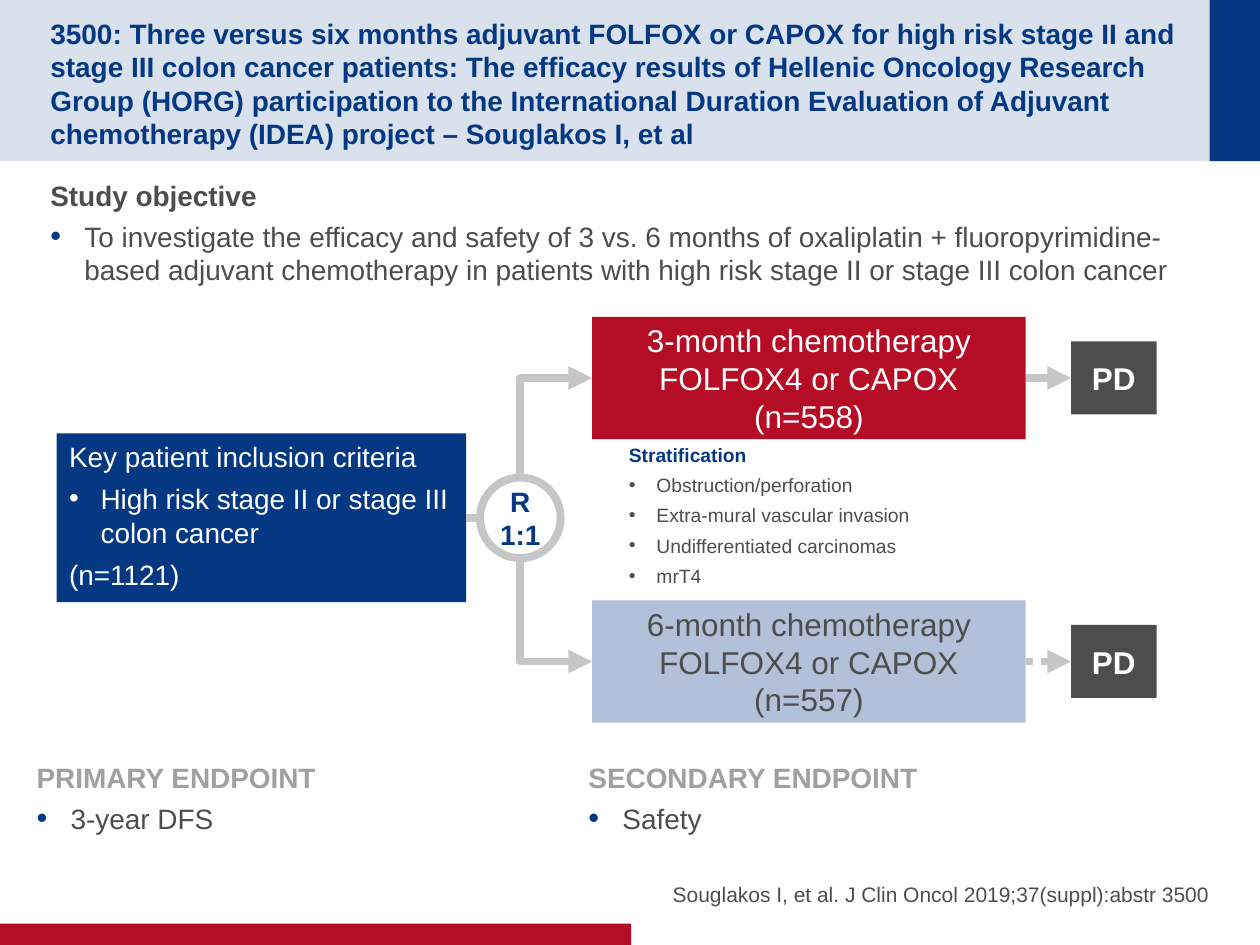
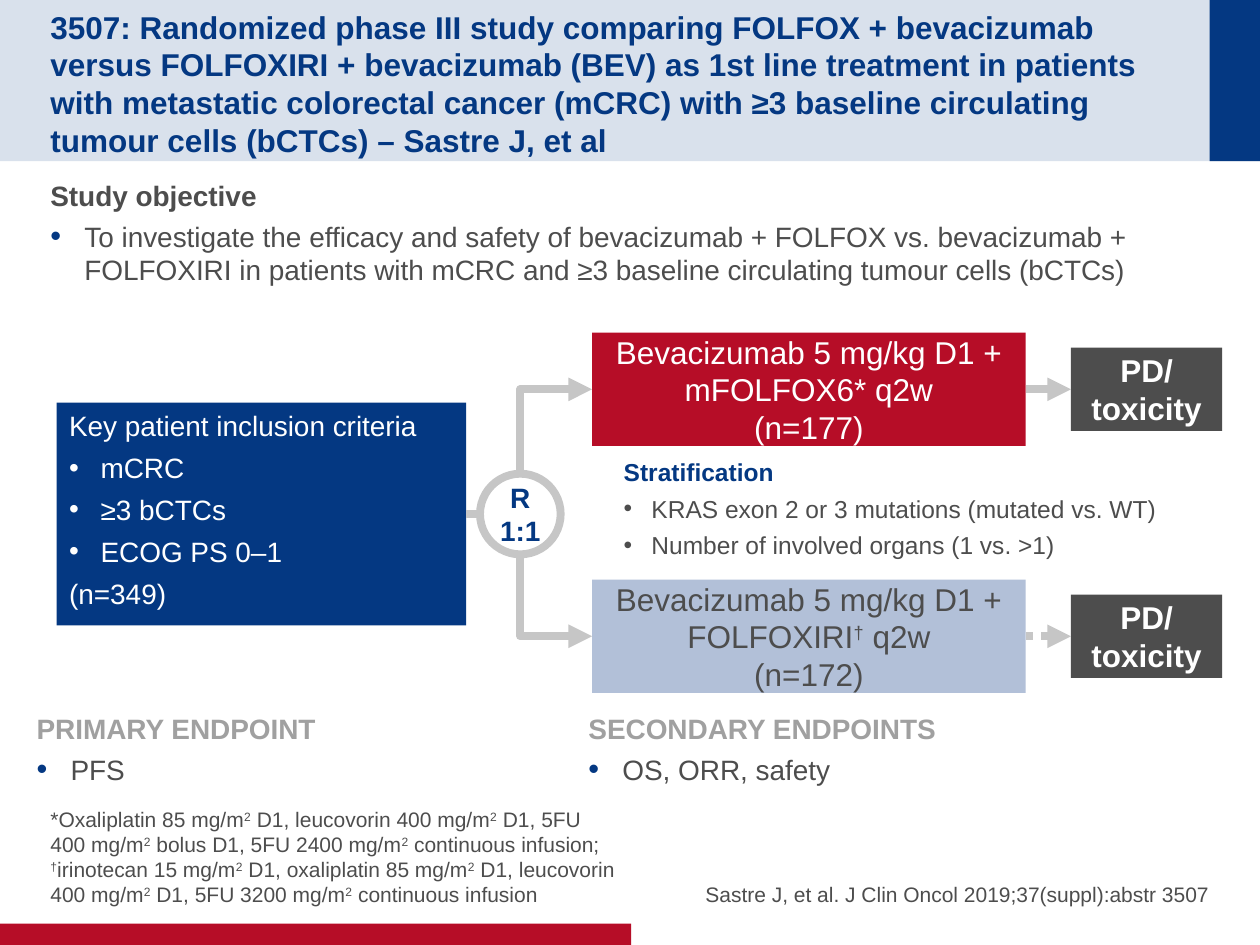
from pptx import Presentation
from pptx.dml.color import RGBColor
from pptx.enum.dml import MSO_LINE
from pptx.enum.shapes import MSO_CONNECTOR as Connector, MSO_SHAPE as Shape
from pptx.enum.text import MSO_ANCHOR as Anchor, PP_ALIGN as Align
from pptx.oxml.ns import qn
from pptx.util import Inches, Pt
from lxml.etree import SubElement

# Content: "^" switches superscript on and off, "•" opens a bulleted paragraph
STUDIES = [
    {
        "title": "3500: Three versus six months adjuvant FOLFOX or CAPOX for high risk stage II and "
                 "stage III colon cancer patients: The efficacy results of Hellenic Oncology Research "
                 "Group (HORG) participation to the International Duration Evaluation of Adjuvant "
                 "chemotherapy (IDEA) project – Souglakos I, et al",
        "title_size": 16,
        "objective": "•To investigate the efficacy and safety of 3 vs. 6 months of oxaliplatin + "
                     "fluoropyrimidine-based adjuvant chemotherapy in patients with high risk stage II "
                     "or stage III colon cancer",
        "criteria": ["Key patient inclusion criteria",
                     "•High risk stage II or stage III colon cancer", "(n=1121)"],
        "arms": ["3-month chemotherapy FOLFOX4 or CAPOX\n(n=558)",
                 "6-month chemotherapy FOLFOX4 or CAPOX\n(n=557)"],
        "outcome": "PD",
        "strata": ["Stratification", "•Obstruction/perforation", "•Extra-mural vascular invasion",
                   "•Undifferentiated carcinomas", "•mrT4"],
        "endpoints": [["PRIMARY ENDPOINT", "•3-year DFS"], ["SECONDARY ENDPOINT", "•Safety"]],
        "footnote": None,
        "citation": "Souglakos I, et al. J Clin Oncol 2019;37(suppl):abstr 3500",
        "hub_y": 4.11, "criteria_height": 1.34, "arm_centers": (3.0, 5.25), "arm_height": 0.97,
        "outcome_size": (0.68, 0.58), "strata_at": (4.99, 3.47), "strata_size": 11,
        "endpoints_top": 5.99,
    },
    {
        "title": "3507: Randomized phase III study comparing FOLFOX + bevacizumab versus FOLFOXIRI + "
                 "bevacizumab (BEV) as 1st line treatment in patients with metastatic colorectal cancer "
                 "(mCRC) with ≥3 baseline circulating tumour cells (bCTCs) – Sastre J, et al",
        "title_size": 18,
        "objective": "•To investigate the efficacy and safety of bevacizumab + FOLFOX vs. bevacizumab + "
                     "FOLFOXIRI in patients with mCRC and ≥3 baseline circulating tumour cells (bCTCs)",
        "criteria": ["Key patient inclusion criteria", "•mCRC", "•≥3 bCTCs", "•ECOG PS 0–1", "(n=349)"],
        "arms": ["Bevacizumab 5 mg/kg D1 + mFOLFOX6* q2w\n(n=177)",
                 "Bevacizumab 5 mg/kg D1 + FOLFOXIRI^†^ q2w\n(n=172)"],
        "outcome": "PD/\ntoxicity",
        "strata": ["Stratification", "•KRAS exon 2 or 3 mutations (mutated vs. WT)",
                   "•Number of involved organs (1 vs. >1)"],
        "endpoints": [["PRIMARY ENDPOINT", "•PFS"], ["SECONDARY ENDPOINTS", "•OS, ORR, safety"]],
        "footnote": "*Oxaliplatin 85 mg/m^2^ D1, leucovorin 400 mg/m^2^ D1, 5FU 400 mg/m^2^ bolus D1, "
                    "5FU 2400 mg/m^2^ continuous infusion; ^†^irinotecan 15 mg/m^2^ D1, oxaliplatin "
                    "85 mg/m^2^ D1, leucovorin 400 mg/m^2^ D1, 5FU 3200 mg/m^2^ continuous infusion",
        "citation": "Sastre J, et al. J Clin Oncol 2019;37(suppl):abstr 3507",
        "hub_y": 4.08, "criteria_height": 1.77, "arm_centers": (3.09, 5.05), "arm_height": 0.9,
        "outcome_size": (1.2, 0.66), "strata_at": (4.95, 3.58), "strata_size": 14,
        "endpoints_top": 5.6,
    },
]

# Shared style
COLORS = {"navy": "043882", "band": "D9E1EC", "red": "B60D27", "pale": "B2C0D8",
          "text": "4D4D4D", "heading": "A0A0A0", "line": "C6C6C6", "white": "FFFFFF"}
ARM_STYLES = [("red", "white", None), ("pale", "text", MSO_LINE.ROUND_DOT)]
FONT = "Arial"
LINE_WIDTH = 4.5
MARGIN = 0.4
CRITERIA_LEFT, CRITERIA_WIDTH = 0.45, 3.25
HUB_X, HUB_SIZE = 4.13, 0.64
ARM_LEFT, ARM_WIDTH = 4.7, 3.44
OUTCOME_LEFT = 8.5
ENDPOINT_LEFTS = (0.29, 4.67)
TOP, LEFT, RIGHT = 0, 1, 3  # connection sites of a rectangle
ELLIPSE_BOTTOM = 4


def rgb(name):
    return RGBColor.from_string(COLORS[name])


# Text
def add_bullet(paragraph, indent, color):
    properties = paragraph._p.get_or_add_pPr()
    properties.set("marL", str(Inches(indent)))
    properties.set("indent", str(-Inches(indent)))
    if color:
        bullet_color = SubElement(properties, qn("a:buClr"))
        SubElement(bullet_color, qn("a:srgbClr")).set("val", COLORS[color])
        SubElement(properties, qn("a:buSzPct")).set("val", "110000")
    SubElement(properties, qn("a:buFont")).set("typeface", FONT)
    SubElement(properties, qn("a:buChar")).set("char", "•")


def add_runs(paragraph, text, size, color, bold):
    for index, piece in enumerate(text.split("^")):
        for line_number, line in enumerate(piece.split("\n")):
            if line_number:
                paragraph.add_line_break()
            run = paragraph.add_run()
            run.text = line
            run.font.name, run.font.size, run.font.bold = FONT, Pt(size), bold
            run.font.color.rgb = rgb(color)
            if index % 2:
                run._r.get_or_add_rPr().set("baseline", "30000")


def write(shape, lines, size, color="text", bold=False, head=None, align=Align.LEFT,
          anchor=Anchor.TOP, insets=(0, 0.05), after=4, indent=0.27, bullet_color=None, wrap=True):
    """Fill a shape with paragraphs; head is the colour of a bold first line."""
    frame = shape.text_frame
    frame.word_wrap, frame.vertical_anchor = wrap, anchor
    frame.margin_left = frame.margin_right = Inches(insets[0])
    frame.margin_top = frame.margin_bottom = Inches(insets[1])
    for number, line in enumerate(lines):
        paragraph = frame.add_paragraph() if number else frame.paragraphs[0]
        if line.startswith("•"):
            add_bullet(paragraph, indent, bullet_color)
        paragraph.alignment, paragraph.space_after = align, Pt(after)
        is_head = head is not None and number == 0
        add_runs(paragraph, line.lstrip("•"), size, head if is_head else color, bold or is_head)


def add_text(slide, left, top, width, height, lines, size, **style):
    box = slide.shapes.add_textbox(Inches(left), Inches(top), Inches(width), Inches(height))
    write(box, lines, size, **style)


# Shapes and lines
def add_block(slide, left, top, width, height, fill, kind=Shape.RECTANGLE):
    shape = slide.shapes.add_shape(kind, Inches(left), Inches(top), Inches(width), Inches(height))
    shape.shadow.inherit = False
    if fill:
        shape.fill.solid()
        shape.fill.fore_color.rgb = rgb(fill)
    else:
        shape.fill.background()
    shape.line.fill.background()
    return shape


def add_box(slide, left, center_y, width, height, fill, text, color, bold=False):
    box = add_block(slide, left, center_y - height / 2, width, height, fill)
    write(box, [text], 18, color=color, bold=bold, align=Align.CENTER, anchor=Anchor.MIDDLE,
          insets=(0.1, 0), after=0)
    return box


def add_line(slide, kind=Connector.STRAIGHT, start=(0, 0), end=(0, 0), arrow=None, dash=None):
    points = [Inches(value) for value in (*start, *end)]
    connector = slide.shapes.add_connector(kind, *points)
    connector.line.color.rgb = rgb("line")
    connector.line.width = Pt(LINE_WIDTH)
    if dash:
        connector.line.dash_style = dash
    if arrow:
        SubElement(connector.line._get_or_add_ln(), qn(arrow)).set("type", "triangle")
    SubElement(connector._element.spPr, qn("a:effectLst"))
    return connector


def add_branch(slide, arm, hub, is_upper):
    """Elbow between the hub and an arm, with its arrowhead at the arm."""
    branch = add_line(slide, Connector.ELBOW, arrow="a:headEnd")
    branch._element.spPr.find(qn("a:prstGeom")).set("prst", "bentConnector2")
    branch.begin_connect(arm, LEFT)
    branch.end_connect(hub, TOP)
    if not is_upper:
        branch._element.xpath(".//a:endCxn")[0].set("idx", str(ELLIPSE_BOTTOM))
        branch.end_y = hub.top + hub.height


# Slide parts
def add_frame(slide, study):
    add_block(slide, 0, 0, 10, 1.28, "band")
    add_block(slide, 9.6, 0, 0.4, 1.28, "navy")
    add_block(slide, 0, 7.33, 5.01, 0.17, "red")
    add_text(slide, MARGIN, 0.22, 9.01, 0.88, [study["title"]], study["title_size"],
             color="navy", bold=True, anchor=Anchor.MIDDLE, insets=(0, 0), after=0)
    add_text(slide, MARGIN, 1.37, 9.2, 1, ["Study objective", study["objective"]], 16,
             head="text", bullet_color="navy")
    footer = {"anchor": Anchor.BOTTOM, "insets": (0, 0)}
    if study["footnote"]:
        add_text(slide, MARGIN, 6.67, 4.52, 0.53, [study["footnote"]], 12, **footer)
    add_text(slide, 4.92, 6.67, 4.68, 0.53, [study["citation"]], 12, align=Align.RIGHT, **footer)


def add_flow(slide, study):
    hub_y, height = study["hub_y"], study["criteria_height"]
    criteria = add_block(slide, CRITERIA_LEFT, hub_y - height / 2, CRITERIA_WIDTH, height, "navy")
    write(criteria, study["criteria"], 16, color="white", insets=(0.1, 0.05), after=4.8, indent=0.25)

    hub_left = HUB_X - HUB_SIZE / 2
    hub = add_block(slide, hub_left, hub_y - HUB_SIZE / 2, HUB_SIZE, HUB_SIZE, None, Shape.OVAL)
    hub.line.color.rgb, hub.line.width = rgb("line"), Pt(LINE_WIDTH)
    write(hub, ["R", "1:1"], 16, color="navy", bold=True, align=Align.CENTER,
          anchor=Anchor.MIDDLE, insets=(0.1, 0.05), after=0, wrap=False)
    add_line(slide, start=(CRITERIA_LEFT + CRITERIA_WIDTH, hub_y), end=(hub_left, hub_y))

    for text, center_y, (fill, color, dash) in zip(study["arms"], study["arm_centers"], ARM_STYLES):
        arm = add_box(slide, ARM_LEFT, center_y, ARM_WIDTH, study["arm_height"], fill, text, color)
        outcome = add_box(slide, OUTCOME_LEFT, center_y, *study["outcome_size"], "text",
                          study["outcome"], "white", bold=True)
        add_branch(slide, arm, hub, center_y < hub_y)
        arrow = add_line(slide, arrow="a:tailEnd", dash=dash)
        arrow.begin_connect(arm, RIGHT)
        arrow.end_connect(outcome, LEFT)

    add_text(slide, *study["strata_at"], 4.62, 0.98, study["strata"], study["strata_size"],
             head="navy", indent=0.22)


def add_endpoints(slide, study):
    for left, lines in zip(ENDPOINT_LEFTS, study["endpoints"]):
        add_text(slide, left, study["endpoints_top"], 4.52, 0.7, lines, 16,
                 head="heading", bullet_color="navy")


def main():
    presentation = Presentation()
    presentation.slide_width, presentation.slide_height = Inches(10), Inches(7.5)
    for study in STUDIES:
        slide = presentation.slides.add_slide(presentation.slide_layouts[6])
        add_frame(slide, study)
        add_flow(slide, study)
        add_endpoints(slide, study)
    presentation.save("out.pptx")


if __name__ == "__main__":
    main()
